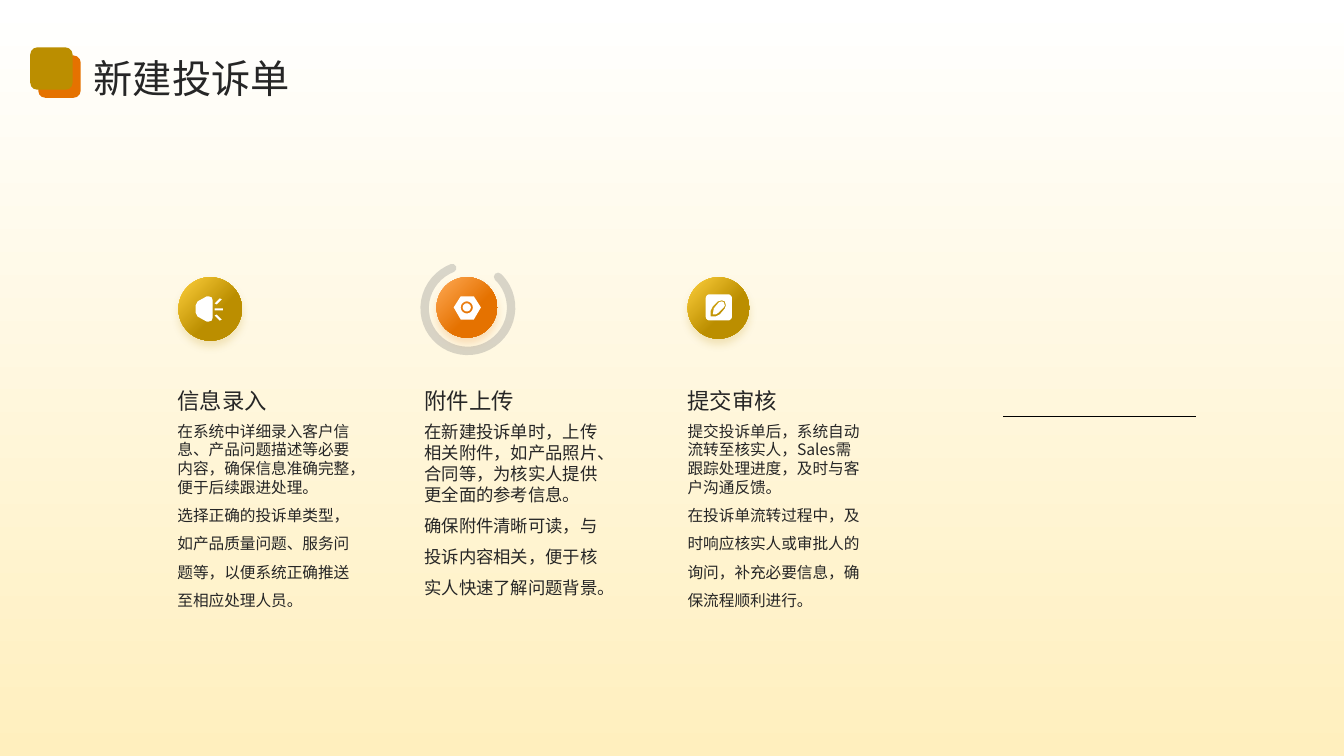
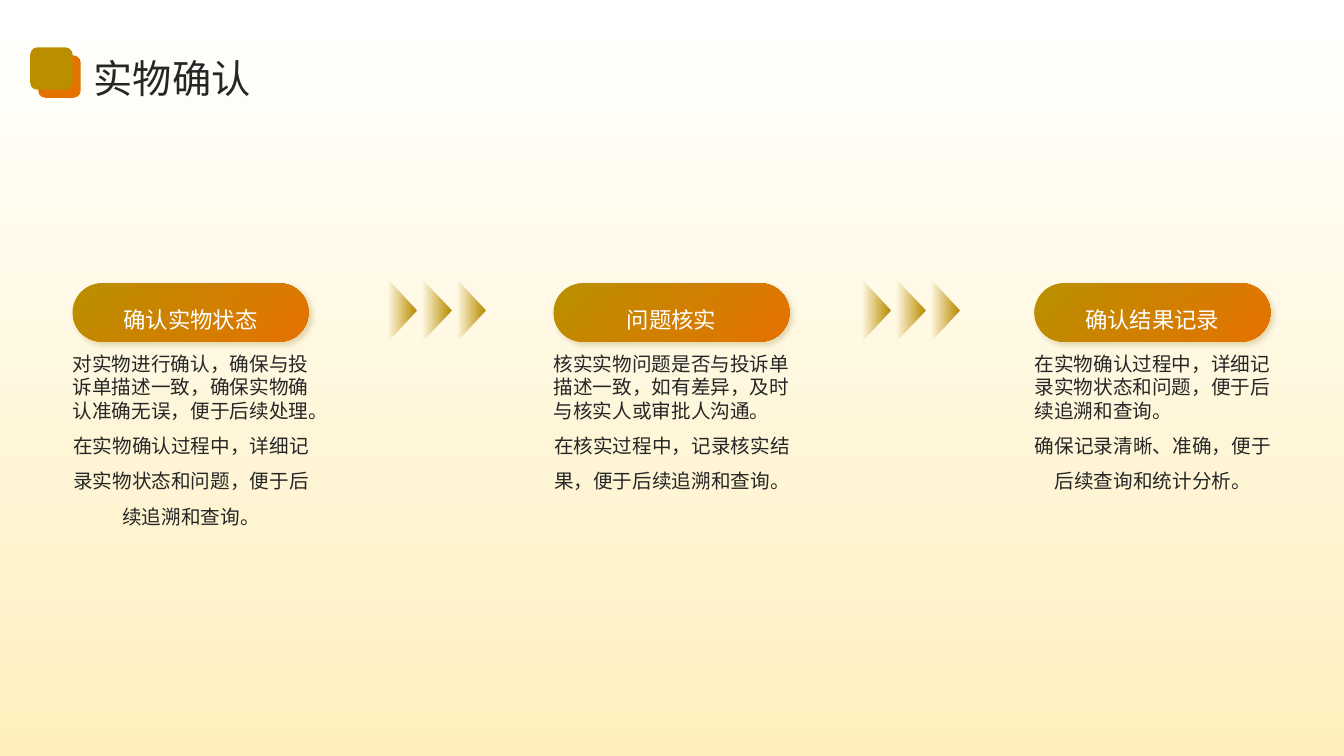
import math
from dataclasses import dataclass

from lxml import etree
from pptx import Presentation
from pptx import util as u
from pptx.dml import color
from pptx.enum import shapes, text
from pptx.oxml import ns


@dataclass(frozen=True)
class Theme:
    font: str = "Noto Sans CJK SC"
    ink: str = "262626"
    white: str = "FFFFFF"
    black: str = "000000"
    grey: str = "808080"
    cream: str = "FFEFBE"
    gold: str = "BB8E00"
    light_gold: str = "FFD03D"
    dark_gold: str = "8C6A00"
    orange: str = "E57200"
    light_orange: str = "FFAA56"
    title_size: float = 28
    heading_size: float = 16
    body_size: float = 14
    small_size: float = 11.2
    medium_size: float = 12.4
    single: float = 1.2
    loose: float = 1.8


THEME = Theme()
KIND = shapes.MSO_SHAPE
LEFT, CENTER = text.PP_ALIGN.LEFT, text.PP_ALIGN.CENTER
FRAME = {
    "word_wrap": True,
    "auto_size": text.MSO_AUTO_SIZE.NONE,
    "margin_left": 0,
    "margin_top": 0,
    "margin_right": 0,
    "margin_bottom": 0,
}


def apply(target, values):
    for name, value in values.items():
        setattr(target, name, value)


def rgb(value):
    return color.RGBColor.from_string(value)


def add_child(parent, tag, **attributes):
    child = etree.SubElement(parent, ns.qn(tag))
    for name, value in attributes.items():
        child.set(name, str(value))
    return child


def set_alpha(color_element, percent):
    add_child(color_element, "a:alpha", val=percent * 1000)


def set_gradient(fill, stops, angle):
    fill.gradient()
    fill.gradient_angle = 360 - angle
    for stop, (position, value) in zip(fill.gradient_stops, stops):
        stop.position = position / 100
        stop.color.rgb = rgb(value)


def circle(x, y, radius, start=0, sweep=360):
    angles = [math.radians(start + sweep * step / 24) for step in range(25)]
    return [(x + radius * math.cos(a), y + radius * math.sin(a)) for a in angles]


def rounded_square(x, y, half, radius):
    inner = half - radius
    corners = [(1, 1), (-1, 1), (-1, -1), (1, -1)]
    return [point for index, (dx, dy) in enumerate(corners)
            for point in circle(x + dx * inner, y + dy * inner, radius, 90 * index, 90)]


def speaker_outlines():
    ray = [(2.13, 3.01), (2.18, 2.96), (2.2, 2.97), (2.15, 3.02)]
    return [
        [(2.07, 2.94), (2.1, 2.95), (2.11, 2.98), (2.11, 3.15), (2.1, 3.18), (2.07, 3.19),
         (2.05, 3.19), (1.96, 3.14), (1.94, 3.1), (1.94, 3.03), (1.96, 2.99), (2.05, 2.94)],
        ray,
        [(2.13, 3.06), (2.21, 3.06), (2.21, 3.08), (2.13, 3.08)],
        [(x, 6.14 - y) for x, y in ray],
    ]


def nut_outlines():
    return [
        [(4.57, 2.94), (4.7, 2.94), (4.77, 3.05), (4.7, 3.17), (4.57, 3.17), (4.5, 3.05)],
        circle(4.63, 3.05, 0.06),
        circle(4.63, 3.05, 0.04),
    ]


def pen_outlines():
    return [
        rounded_square(7.13, 3.05, 0.13, 0.04),
        [(7.16, 2.98), (7.12, 2.99), (7.07, 3.04), (7.05, 3.08), (7.05, 3.14),
         (7.1, 3.14), (7.14, 3.12), (7.19, 3.06), (7.2, 3.03), (7.19, 2.99)],
        [(7.16, 2.99), (7.13, 3), (7.08, 3.06), (7.07, 3.12), (7.1, 3.12),
         (7.13, 3.1), (7.18, 3.05), (7.19, 3.03), (7.18, 3)],
    ]


class Deck:
    def __init__(self, theme):
        self.theme = theme
        self.presentation = Presentation()
        apply(self.presentation, {"slide_width": u.Inches(13.33), "slide_height": u.Inches(7.5)})
        set_gradient(self.presentation.slide_master.background.fill,
                     [(0, theme.white), (100, theme.cream)], 90)
        self.slide = None

    def start_slide(self, title):
        self.slide = self.presentation.slides.add_slide(self.presentation.slide_layouts[5])
        shape = self.slide.shapes.title
        apply(shape, {"left": u.Inches(0.93), "top": u.Inches(0.49),
                      "width": u.Inches(11.67), "height": u.Inches(0.51)})
        self.set_text(shape, [(title, 1.1, LEFT)], self.theme.title_size, self.theme.ink,
                      text.MSO_ANCHOR.MIDDLE)
        for left, top, fill in [(0.38, 0.55, self.theme.orange), (0.3, 0.47, self.theme.gold)]:
            self.shape(KIND.ROUNDED_RECTANGLE, left, top, 0.42, 0.42, fill)

    def set_text(self, shape, lines, size, ink, anchor):
        frame = shape.text_frame
        apply(frame, {**FRAME, "vertical_anchor": anchor})
        for index, (words, spacing, align) in enumerate(lines):
            paragraph = frame.add_paragraph() if index else frame.paragraphs[0]
            apply(paragraph, {"alignment": align, "line_spacing": spacing})
            run = paragraph.add_run()
            run.text = words
            apply(run.font, {"size": u.Pt(size), "name": self.theme.font})
            run.font.color.rgb = rgb(ink)
        for properties in shape.element.iter(ns.qn("a:rPr")):
            add_child(properties, "a:ea", typeface=self.theme.font)

    def shape(self, kind, left, top, width, height, fill=None, gradient=None, shadow=None):
        shape = self.slide.shapes.add_shape(
            kind, u.Inches(left), u.Inches(top), u.Inches(width), u.Inches(height))
        self.finish(shape, fill)
        if gradient:
            set_gradient(shape.fill, *gradient)
        if shadow:
            self.cast(shape, *shadow)
        return shape

    def finish(self, shape, fill):
        shape.shadow.inherit = False
        shape.line.fill.background()
        if fill:
            shape.fill.solid()
            shape.fill.fore_color.rgb = rgb(fill)
        else:
            shape.fill.background()

    def cast(self, shape, value, alpha, blur, distance, direction):
        effects = shape.element.spPr.find(ns.qn("a:effectLst"))
        outer = add_child(effects, "a:outerShdw", blurRad=u.Pt(blur), dist=u.Pt(distance),
                          dir=direction * 60000, algn="ctr", rotWithShape=0)
        set_alpha(add_child(outer, "a:srgbClr", val=value), alpha)

    def text_box(self, left, top, width, height, lines, size, anchor=text.MSO_ANCHOR.TOP):
        box = self.slide.shapes.add_textbox(
            u.Inches(left), u.Inches(top), u.Inches(width), u.Inches(height))
        self.set_text(box, lines, size, self.theme.ink, anchor)

    def body(self, left, top, width, height, paragraphs, size, last_align=LEFT):
        first, last = paragraphs
        lines = [(first, u.Pt(size * self.theme.single), LEFT),
                 (last, u.Pt(size * self.theme.loose), last_align)]
        self.text_box(left, top, width, height, lines, size)

    def badge(self, left, diameter, light, dark):
        self.shape(KIND.OVAL, left, 2.75, diameter, diameter,
                   gradient=([(0, light), (60, dark)], 45), shadow=(dark, 20, 6, 4, 90))

    def icon(self, outlines):
        builder = None
        for outline in outlines:
            points = [(x * 1000, y * 1000) for x, y in outline]
            if builder is None:
                builder = self.slide.shapes.build_freeform(*points[0], scale=u.Inches(1) / 1000)
            else:
                builder.move_to(*points[0])
            builder.add_line_segments(points[1:], close=True)
        self.finish(builder.convert_to_shape(), self.theme.white)

    def open_ring(self, left, top, width, height):
        ring = self.shape(KIND.ARC, left, top, width, height)
        ring.rotation = 152.1
        for index, degrees in enumerate((162, 96.47)):
            ring.adjustments[index] = degrees * 0.6
        ring.line.width = u.Pt(6)
        ring.line.color.rgb = rgb(self.theme.grey)
        outline = ring.element.spPr.find(ns.qn("a:ln"))
        outline.set("cap", "rnd")
        set_alpha(next(outline.iter(ns.qn("a:srgbClr"))), 30)

    def rule(self, left, top, right):
        line = self.slide.shapes.add_connector(
            shapes.MSO_CONNECTOR.STRAIGHT,
            u.Inches(left), u.Inches(top), u.Inches(right), u.Inches(top))
        line.line.width = u.Pt(0.5)
        line.line.color.rgb = rgb(self.theme.black)
        add_child(line.element.spPr, "a:effectLst")

    def pill(self, left, top, width, height, label):
        pill = self.shape(KIND.ROUNDED_RECTANGLE, left, top, width, height,
                          gradient=([(4, self.theme.gold), (100, self.theme.orange)], 45),
                          shadow=(self.theme.dark_gold, 23, 4, 3, 45))
        pill.adjustments[0] = 0.5
        size = self.theme.heading_size
        self.set_text(pill, [(label, u.Pt(size * self.theme.loose), CENTER)], size,
                      self.theme.white, text.MSO_ANCHOR.MIDDLE)

    def fading_arrow(self, left, top):
        gold = self.theme.gold
        arrow = self.shape(KIND.ISOSCELES_TRIANGLE, left, top, 0.69, 0.32,
                           gradient=([(4, gold), (88, gold)], 90))
        arrow.rotation = 90
        stops = list(arrow.element.spPr.iter(ns.qn("a:srgbClr")))
        set_alpha(stops[-1], 0)


def build_complaint_slide(deck):
    theme = deck.theme
    deck.start_slide("新建投诉单")
    deck.rule(9.95, 4.13, 11.86)
    deck.open_ring(4.21, 2.63, 0.86, 0.85)
    gold, orange = (theme.light_gold, theme.gold), (theme.light_orange, theme.orange)
    steps = [
        (1.76, "信息录入", theme.small_size, (1.77, 0.63, *gold), speaker_outlines(),
         ("在系统中详细录入客户信息、产品问题描述等必要内容，确保信息准确完整，便于后续跟进处理。",
          "选择正确的投诉单类型，如产品质量问题、服务问题等，以便系统正确推送至相应处理人员。")),
        (4.21, "附件上传", theme.medium_size, (4.33, 0.6, *orange), nut_outlines(),
         ("在新建投诉单时，上传相关附件，如产品照片、合同等，为核实人提供更全面的参考信息。",
          "确保附件清晰可读，与投诉内容相关，便于核实人快速了解问题背景。")),
        (6.82, "提交审核", theme.small_size, (6.82, 0.61, *gold), pen_outlines(),
         ("提交投诉单后，系统自动流转至核实人，Sales需跟踪处理进度，及时与客户沟通反馈。",
          "在投诉单流转过程中，及时响应核实人或审批人的询问，补充必要信息，确保流程顺利进行。")),
    ]
    for left, heading, size, badge, outlines, paragraphs in steps:
        deck.badge(*badge)
        deck.icon(outlines)
        deck.text_box(left, 3.5, 1.75, 0.61, [(heading, 1.0, LEFT)], theme.heading_size,
                      text.MSO_ANCHOR.BOTTOM)
        deck.body(left, 4.18, 1.75, 2.42, paragraphs, size)


def build_inspection_slide(deck):
    deck.start_slide("实物确认")
    stages = [
        ("确认实物状态",
         ("对实物进行确认，确保与投诉单描述一致，确保实物确认准确无误，便于后续处理。",
          "在实物确认过程中，详细记录实物状态和问题，便于后续追溯和查询。")),
        ("问题核实",
         ("核实实物问题是否与投诉单描述一致，如有差异，及时与核实人或审批人沟通。",
          "在核实过程中，记录核实结果，便于后续追溯和查询。")),
        ("确认结果记录",
         ("在实物确认过程中，详细记录实物状态和问题，便于后续追溯和查询。",
          "确保记录清晰、准确，便于后续查询和统计分析。")),
    ]
    for index, (label, paragraphs) in enumerate(stages):
        left = 0.72 + 4.77 * index
        deck.pill(left, 2.81, 2.34, 0.58, label)
        deck.body(left, 3.49, 2.35, 2.87, paragraphs, deck.theme.body_size, CENTER)
    for start in (3.63, 8.33):
        for index in range(3):
            deck.fading_arrow(start + 0.34 * index, 2.92)


def main():
    deck = Deck(THEME)
    build_complaint_slide(deck)
    build_inspection_slide(deck)
    deck.presentation.save("out.pptx")


if __name__ == "__main__":
    main()
